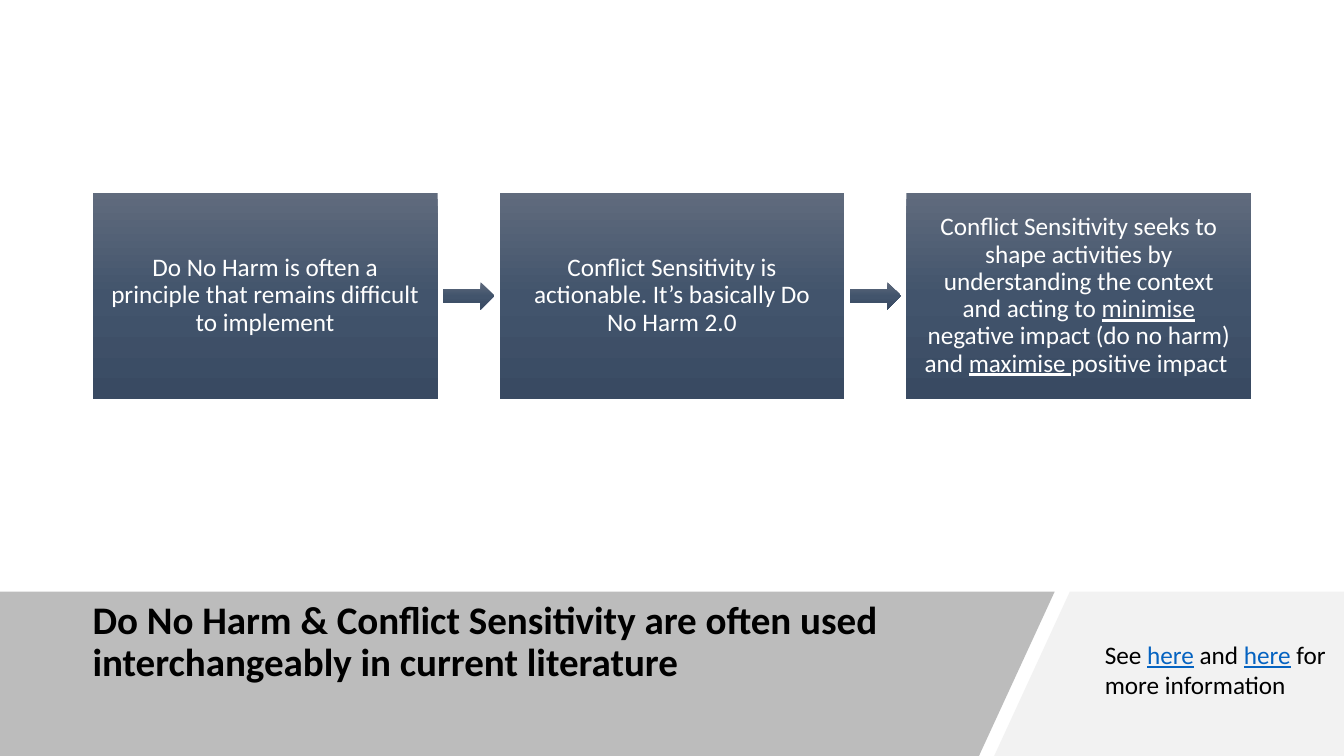
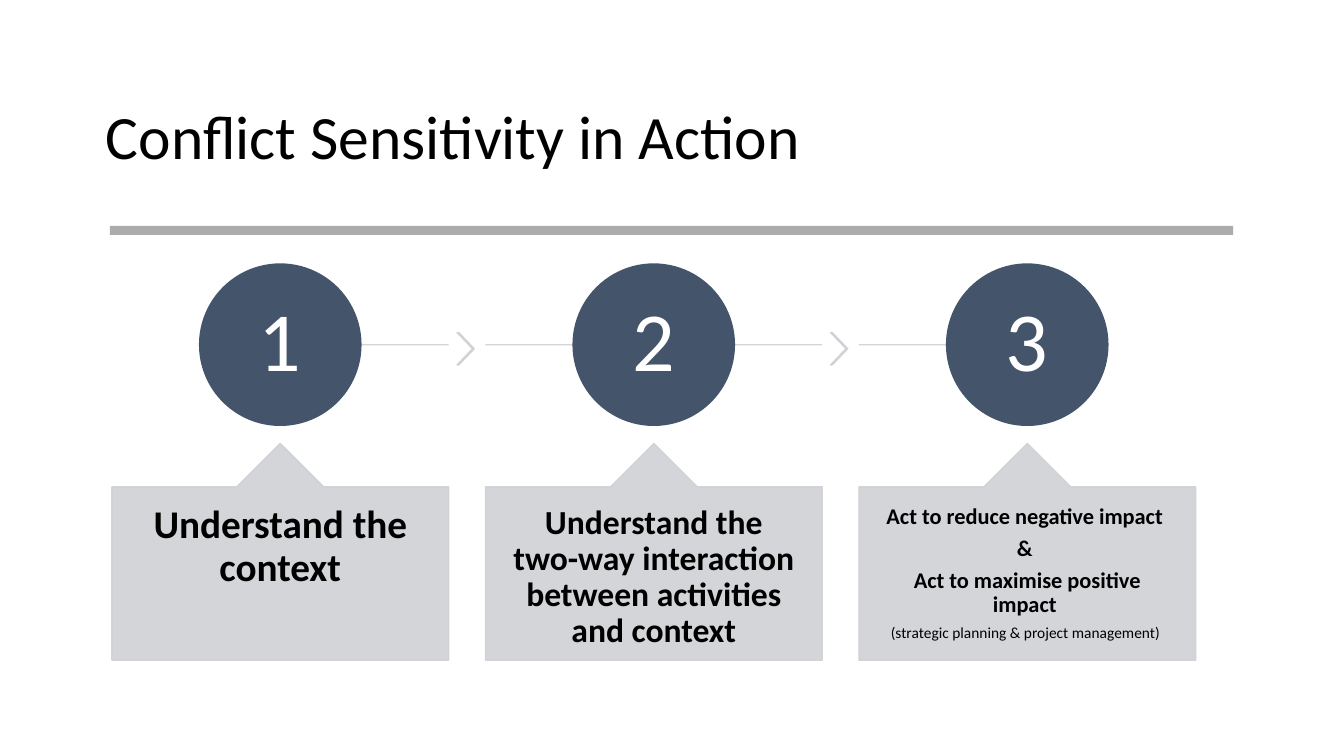
from copy import deepcopy
from dataclasses import dataclass

from pptx import Presentation, util as u
from pptx.dml.color import RGBColor
from pptx.enum import shapes, text
from pptx.oxml.ns import qn
from pptx.oxml.xmlchemy import OxmlElement

FONT = "Calibri"
INK, WHITE, LINK = "000000", "FFFFFF", "0563C1"
NAVY, PALE, DARK, RULE, LIGHT = "44546A", "CFD1D4", "595959", "808080", "F2F2F2"
SHADE = ((0, "606B7D"), (0.5, "42546C"), (1, "394A62"))
KIND = shapes.MSO_SHAPE
MID, TOP = text.MSO_ANCHOR.MIDDLE, text.MSO_ANCHOR.TOP
LEFT, CENTER = text.PP_ALIGN.LEFT, text.PP_ALIGN.CENTER


@dataclass
class Box:
    x: float
    y: float
    w: float
    h: float

    def cut(self, x, y, w, h):
        """A box inside this one, on a grid of 100 columns and 100 rows."""
        return Box(self.x + self.w * x / 100, self.y + self.h * y / 100,
                   self.w * w / 100, self.h * h / 100)

    def split(self, count, gap):
        """Equal columns, and the gaps between them."""
        wide = (100 - gap * (count - 1)) / count
        step = wide + gap
        cols = [self.cut(i * step, 0, wide, 100) for i in range(count)]
        gaps = [self.cut(i * step + wide, 0, gap, 100) for i in range(count - 1)]
        return cols, gaps

    def emu(self):
        return [u.Inches(v) for v in (self.x, self.y, self.w, self.h)]


PAGE = Box(0, 0, 13.33, 7.5)


def color(code):
    return RGBColor.from_string(code)


def fade(form, share):
    """Sets the opacity of a shape's solid fill and line, in percent."""
    for tint in list(form.element.spPr.iter(qn("a:srgbClr"))):
        alpha = OxmlElement("a:alpha")
        alpha.set("val", str(share * 1000))
        tint.append(alpha)


def paint(form, code, share=100, edge=False):
    form.shadow.inherit = False
    inks = [form.fill]
    if edge:
        form.line.width = u.Pt(1)
        inks.append(form.line.fill)
    else:
        form.line.fill.background()
    for ink in inks:
        ink.solid()
        ink.fore_color.rgb = color(code)
    if share < 100:
        fade(form, share)


def blend(form):
    """Fills a shape with the navy gradient, top to bottom."""
    form.shadow.inherit = False
    form.line.fill.background()
    form.fill.gradient()
    form.fill.gradient_angle = 270
    stops = form.element.spPr.find(".//" + qn("a:gsLst"))
    stops.insert(1, deepcopy(stops[0]))
    for stop, (place, code) in zip(form.fill.gradient_stops, SHADE):
        stop.position = place
        stop.color.rgb = color(code)


def shape(slide, kind, box, *adj):
    form = slide.shapes.add_shape(kind, *box.emu())
    for i, value in enumerate(adj):
        form.adjustments[i] = value
    return form


def write(form, paras, size, code=INK, bold=False, align=CENTER, anchor=MID,
          inset=(0.1, 0.05), lead=0.9, gap=0):
    """Each paragraph is a list of runs: a string, or (string, changes)."""
    frame = form.text_frame
    frame.word_wrap = True
    frame.vertical_anchor = anchor
    frame.margin_left = frame.margin_right = u.Inches(inset[0])
    frame.margin_top = frame.margin_bottom = u.Inches(inset[1])
    for i, runs in enumerate(paras):
        para = frame.add_paragraph() if i else frame.paragraphs[0]
        para.alignment = align
        para.line_spacing = lead
        para.space_after = u.Pt(gap)
        for item in runs:
            words, diff = (item, {}) if isinstance(item, str) else item
            run = para.add_run()
            run.text = words
            font = run.font
            font.name = FONT
            font.size = u.Pt(diff.get("size", size))
            font.bold = diff.get("bold", bold)
            font.underline = diff.get("line", False)
            font.color.rgb = color(diff.get("code", code))


def label(slide, box, paras, size, **style):
    form = slide.shapes.add_textbox(*box.emu())
    write(form, paras, size, align=LEFT, **style)


def outline(slide, box, points, code, share=100):
    spots = [box.cut(x, y, 0, 0).emu()[:2] for x, y in points]
    draft = slide.shapes.build_freeform(*spots[0], scale=1.0)
    draft.add_line_segments(spots[1:], close=True)
    paint(draft.convert_to_shape(), code, share)


def rule(slide, start, end):
    line = slide.shapes.add_connector(shapes.MSO_CONNECTOR.STRAIGHT,
                                      *start.emu()[:2], *end.emu()[:2])
    line.line.width = u.Pt(1)
    line.line.fill.solid()
    line.line.fill.fore_color.rgb = color(PALE)
    fade(line, 90)
    line.element.spPr.append(OxmlElement("a:effectLst"))


def flow(slide, box, cards):
    """Gradient cards in a row, with an arrow in each gap."""
    cols, gaps = box.split(len(cards), 5.35)
    for col, runs in zip(cols, cards):
        card = shape(slide, KIND.RECTANGLE, col)
        blend(card)
        write(card, [runs], 18, WHITE, inset=(0.17, 0.17))
    for space in gaps:
        blend(shape(slide, KIND.RIGHT_ARROW, space.cut(8.5, 43.4, 83, 13.2), 0.5, 0.5))


def band(slide, box, head, note):
    """Slanted footer with the title on the left and a note on the right."""
    outline(slide, box, [(79.6, 0), (100, 0), (100, 100), (73.97, 100)], LIGHT)
    outline(slide, box, [(0, 0), (78.47, 0), (72.84, 100), (0, 100)], DARK, 40)
    label(slide, box.cut(6.15, 1, 66.24, 60.6), [[head]], 27.9, bold=True)
    label(slide, box.cut(81.47, 25.8, 18.53, 43.6), [note], 18, anchor=TOP, lead=1)


def steps(slide, box, items):
    """Numbered circles on a line, each above a callout."""
    cols, gaps = box.split(len(items), 3.4)
    last = len(items) - 1
    for i, (col, (size, paras)) in enumerate(zip(cols, items)):
        rule(slide, col.cut(0 if i else 50, 20.36, 0, 0),
             col.cut(100 if i < last else 50, 20.36, 0, 0))
        disc = shape(slide, KIND.OVAL, col.cut(26.05, 0, 47.9, 40.71))
        paint(disc, NAVY, edge=True)
        write(disc, [[str(i + 1)]], 60, WHITE, inset=(0.06, 0.06))
        card = shape(slide, KIND.UP_ARROW_CALLOUT, col.cut(0, 45.29, 100, 54.71),
                     0.5, 0.2, 0.2, 0.8)
        paint(card, PALE, 90, edge=True)
        write(card, paras, size, bold=True, anchor=TOP, inset=(0.26, 0.18),
              gap=0.35 * size)
    for space in gaps:
        mark = shape(slide, KIND.CHEVRON, space.cut(23, 17.3, 46.6, 8.14), 0.9)
        paint(mark, PALE, 90, edge=True)


def terms(slide):
    under = {"line": True}
    link = {"line": True, "code": LINK}
    band(slide, PAGE.cut(0, 78.27, 100, 21.73),
         "Do No Harm & Conflict Sensitivity are often used "
         "interchangeably in current literature",
         ["See ", ("here", link), " and ", ("here", link), " for more information"])
    flow(slide, PAGE.cut(6.9, 25.47, 86.2, 27.33), [
        ["Do No Harm is often a principle that remains difficult to implement"],
        ["Conflict Sensitivity is actionable. It’s basically Do No Harm 2.0"],
        ["Conflict Sensitivity seeks to shape activities by understanding the "
         "context and acting to ", ("minimise", under),
         " negative impact (do no harm) and ", ("maximise ", under),
         "positive impact "],
    ])


def action(slide):
    label(slide, PAGE.cut(7.13, 8.8, 85.75, 19.33),
          [["Conflict Sensitivity in Action"]], 44)
    paint(shape(slide, KIND.RECTANGLE, PAGE.cut(8.18, 29.87, 83.57, 1.2)), RULE, 65)
    steps(slide, PAGE.cut(8.33, 34.93, 80.63, 52.4), [
        (28, [["Understand the context"]]),
        (24, [["Understand the two-way interaction between activities and context"]]),
        (16, [["Act to reduce negative impact "], ["& "],
              ["Act to maximise positive impact "],
              [("(strategic planning & project management) ",
                {"size": 11, "bold": False})]]),
    ])


def main():
    deck = Presentation()
    deck.slide_width, deck.slide_height = PAGE.emu()[2:]
    for build in (terms, action):
        build(deck.slides.add_slide(deck.slide_layouts[6]))
    deck.save("out.pptx")


if __name__ == "__main__":
    main()
